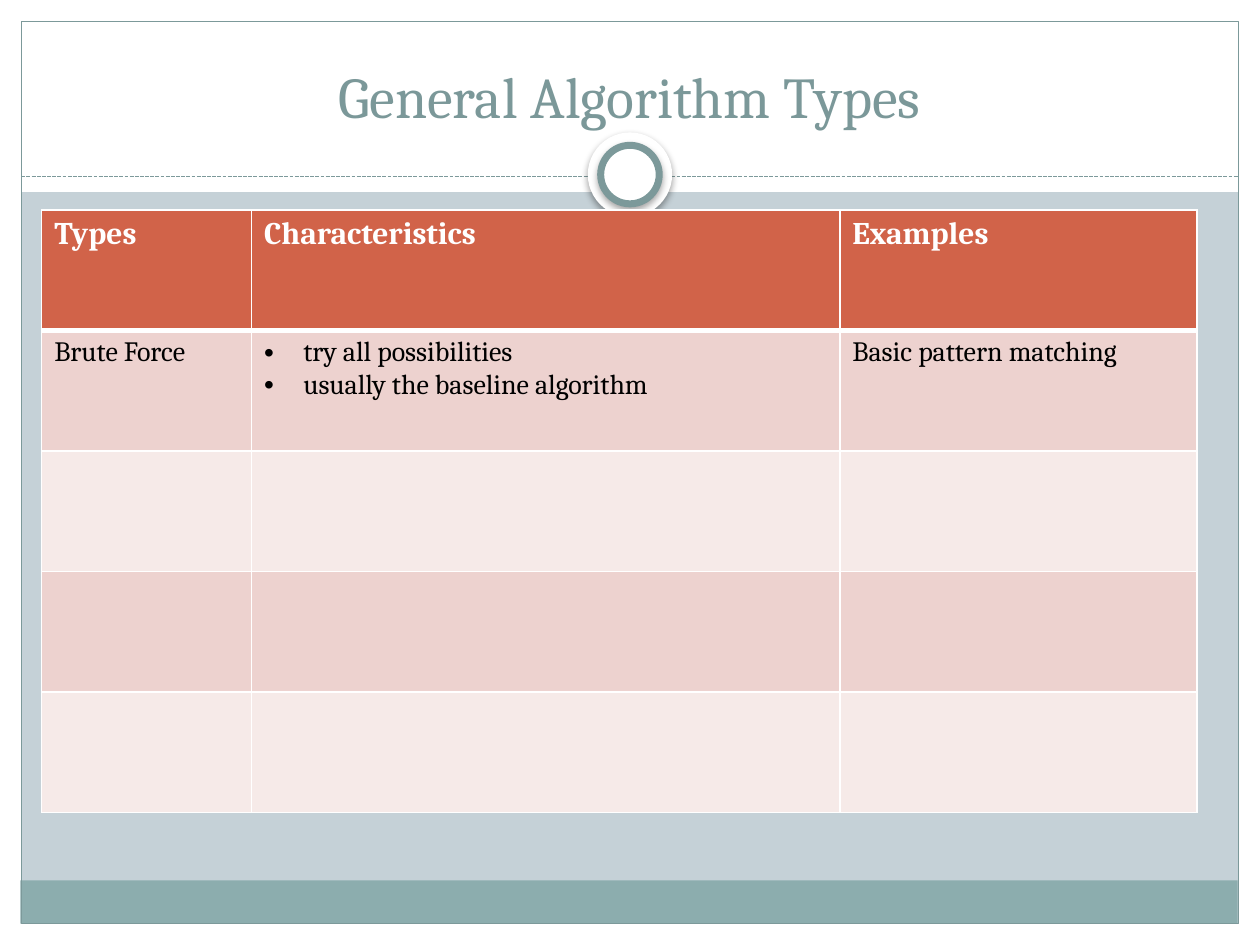
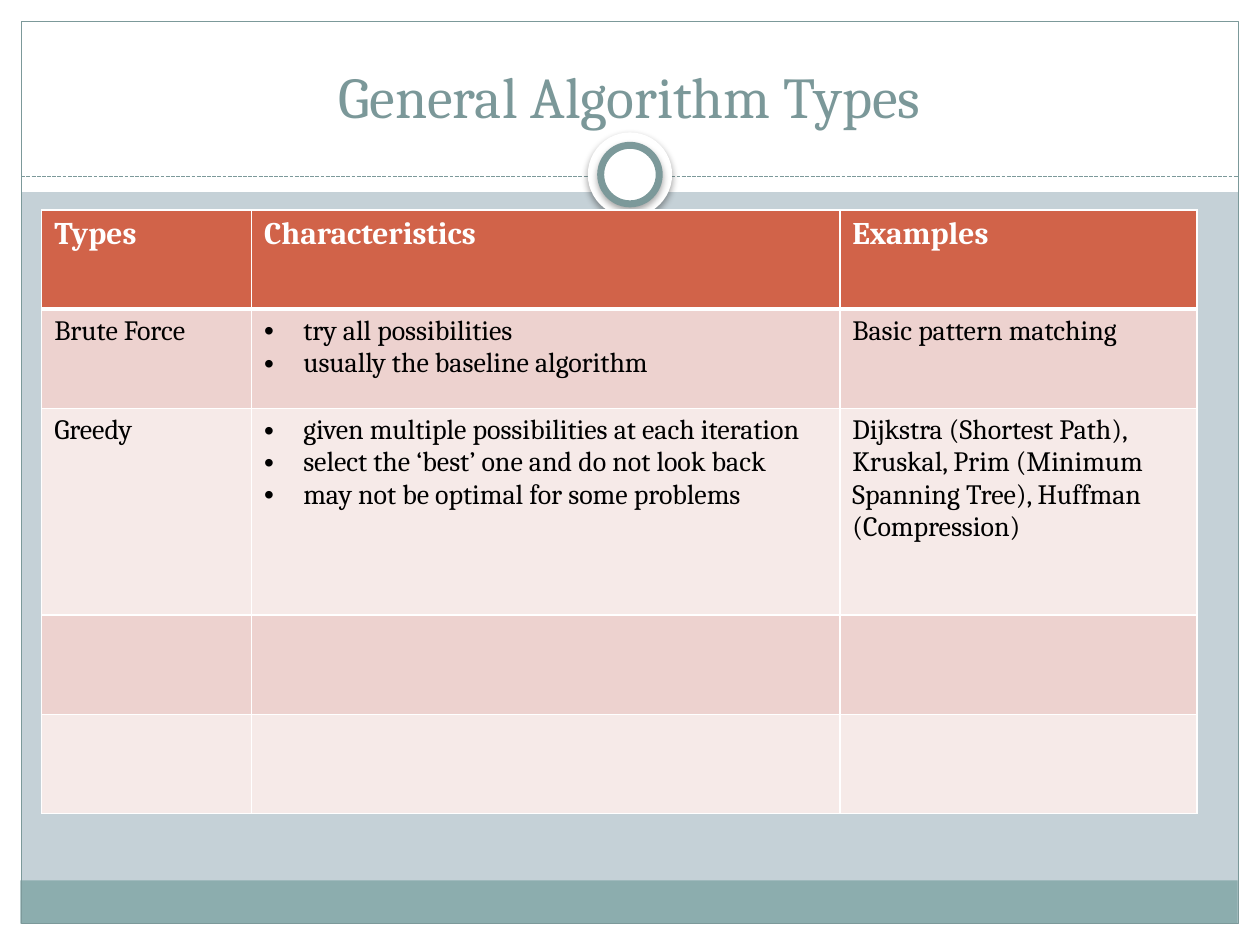
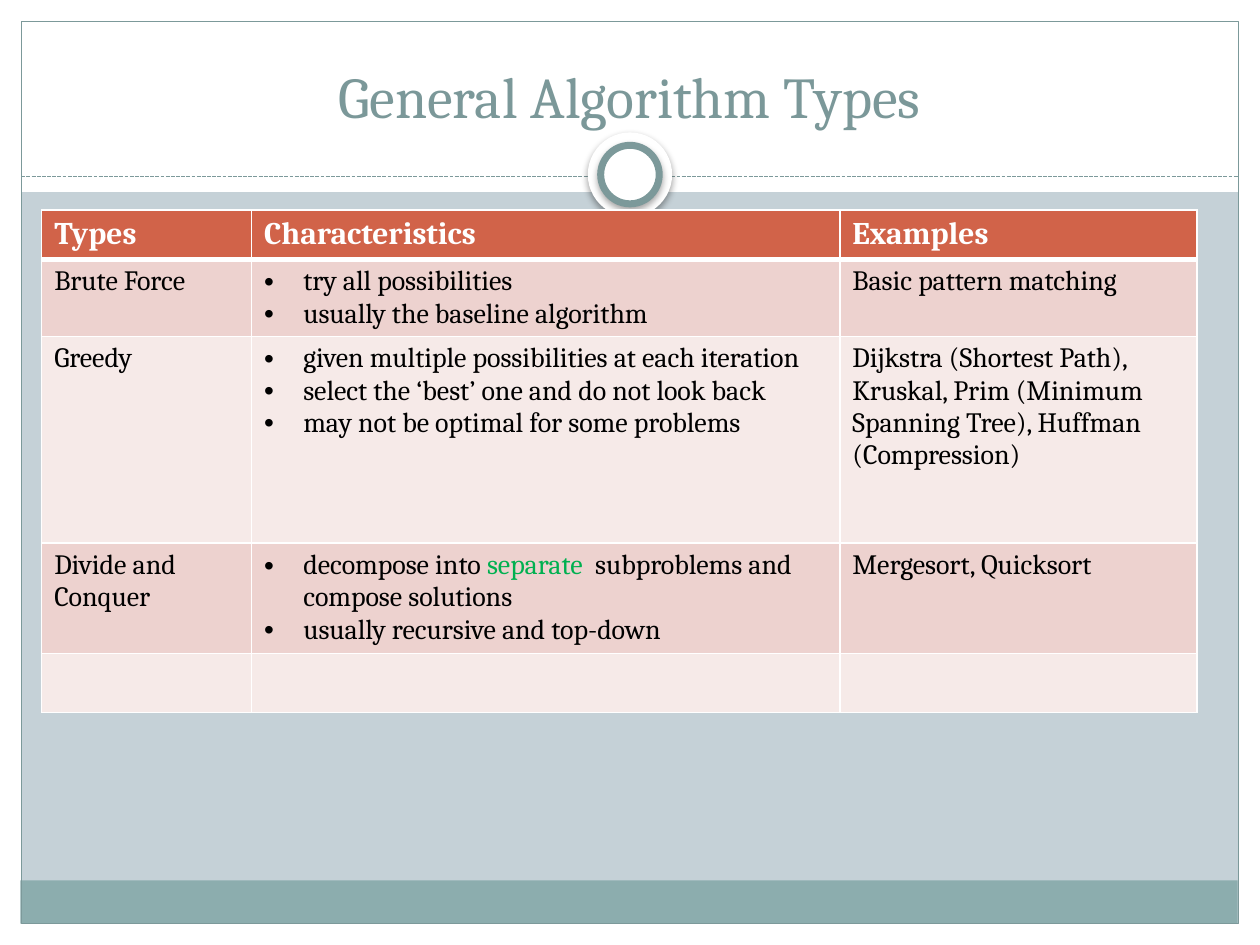
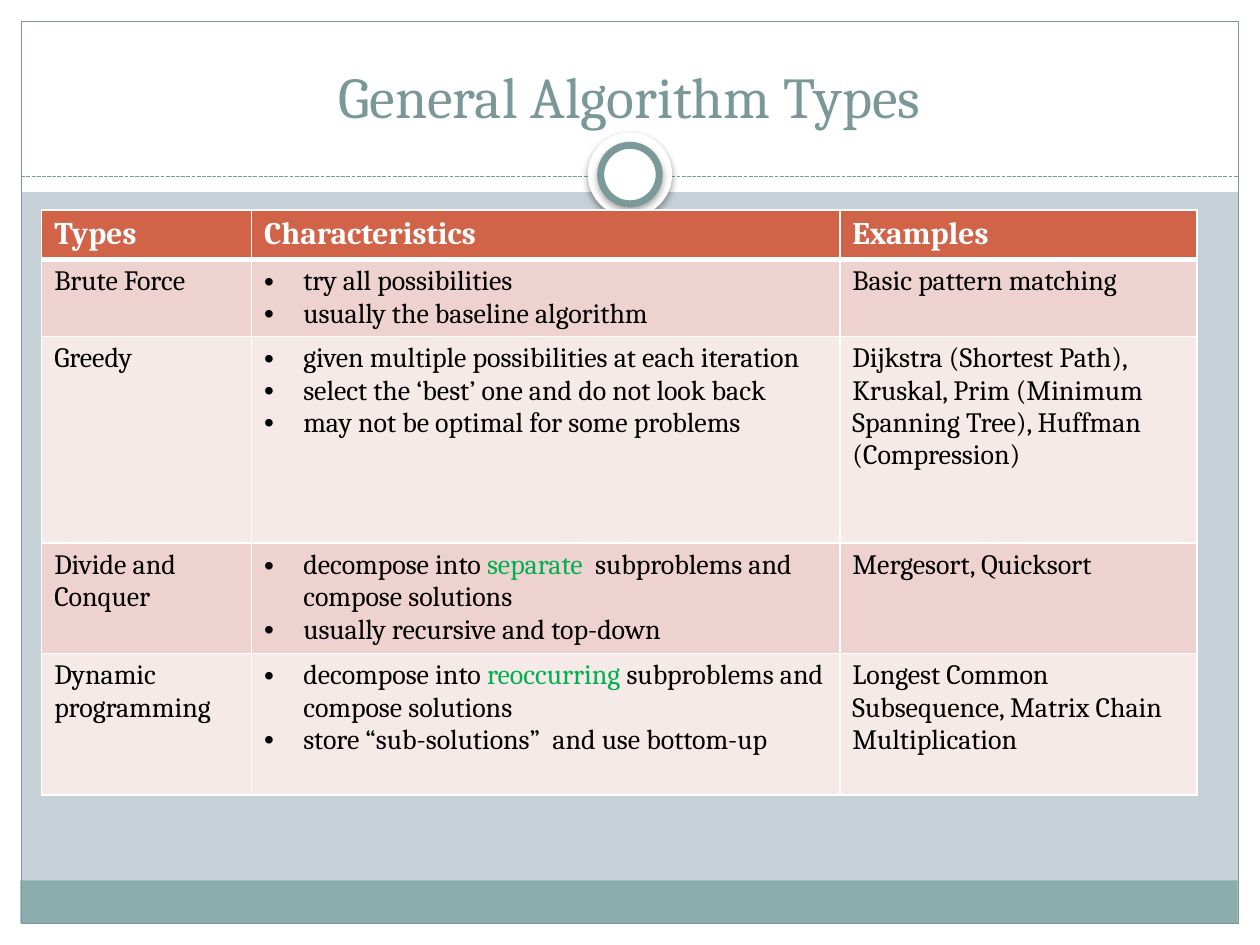
from lxml.etree import SubElement
from pptx import Presentation
from pptx.dml.color import RGBColor
from pptx.enum.dml import MSO_LINE_DASH_STYLE as Dash
from pptx.enum.shapes import MSO_CONNECTOR as Connector, MSO_SHAPE as Shape
from pptx.enum.text import MSO_ANCHOR as Anchor, MSO_AUTO_SIZE as AutoSize, PP_ALIGN as Align
from pptx.oxml.ns import qn
from pptx.util import Cm, Pt

FONT = "Cambria"
COLORS = {name: RGBColor.from_string(value) for name, value in {
    "background": "C5D1D7", "white": "FFFFFF", "black": "000000",
    "footer": "8CADAE", "outline": "7C999A", "title": "7B9899",
    "header": "D16349", "odd row": "EDD2CF", "even row": "F6EAE8",
    "highlight": "00B050",
}.items()}

# Table text: one list of paragraphs per cell, highlighted words between bars
HEADINGS = ["Types", "Characteristics", "Examples"]
ALGORITHMS = [
    ["Brute Force",
     ["try all possibilities", "usually the baseline algorithm"],
     "Basic pattern matching"],
    ["Greedy",
     ["given multiple possibilities at each iteration",
      "select the ‘best’ one and do not look back",
      "may not be optimal for some problems"],
     "Dijkstra (Shortest Path), Kruskal, Prim (Minimum Spanning Tree), Huffman (Compression)"],
    ["Divide and Conquer",
     ["decompose into |separate | subproblems and compose solutions",
      "usually recursive and top-down"],
     "Mergesort, Quicksort"],
    ["Dynamic programming",
     ["decompose into |reoccurring |subproblems and compose solutions",
      "store “sub-solutions”  and use bottom-up"],
     "Longest Common Subsequence, Matrix Chain Multiplication"],
]
COLUMN_WIDTHS = [4.23, 11.86, 7.2]
# Each slide reveals one more algorithm
ROW_HEIGHTS = [
    [2.43] * 5,
    [2, 2, 4.17, 2, 2],
    [1, 1.55, 4.17, 2.22, 1.19],
    [1, 1.55, 4.17, 2.22, 2.86],
]


def add_text(paragraph, text, size, color, bold=False):
    for index, part in enumerate(text.split("|")):
        run = paragraph.add_run()
        run.text = part
        run.font.name = FONT
        run.font.size = Pt(size)
        run.font.bold = bold
        run.font.color.rgb = COLORS["highlight" if index % 2 else color]


def add_color(parent, color):
    fill = SubElement(parent, qn("a:solidFill"))
    return SubElement(fill, qn("a:srgbClr"), val=str(COLORS[color]))


presentation = Presentation()
presentation.slide_width = Cm(25.4)
presentation.slide_height = Cm(19.05)
layout = presentation.slide_layouts[5]
layout.background.fill.solid()
layout.background.fill.fore_color.rgb = COLORS["background"]
title_area = layout.placeholders[0]
title_area.left, title_area.top = Cm(0.84), Cm(0.64)
title_area.width, title_area.height = Cm(23.7), Cm(2.11)
slides = [presentation.slides.add_slide(layout) for _ in ROW_HEIGHTS]

# Shared frame: drawn on the first slide, then moved to the layout
decorations = []
shapes = slides[0].shapes
for kind, left, top, width, height, fill, line_width in [
    (Shape.RECTANGLE, 0, 18.62, 25.4, 0.43, "white", 0),
    (Shape.RECTANGLE, 0, 0, 25.4, 3.87, "white", 0),
    (Shape.RECTANGLE, 0, 0, 0.43, 19.05, "white", 0),
    (Shape.RECTANGLE, 24.97, 0, 0.43, 19.05, "white", 0),
    (Shape.RECTANGLE, 0.41, 17.75, 24.54, 0.87, "footer", 0),
    (Shape.RECTANGLE, 0.43, 0.43, 24.54, 18.19, None, 0.75),
    (Shape.OVAL, 11.85, 2.67, 1.7, 1.7, "white", 0),
    (Shape.OVAL, 12.11, 2.93, 1.18, 1.18, "white", 4),
]:
    shape = shapes.add_shape(kind, Cm(left), Cm(top), Cm(width), Cm(height))
    shape.shadow.inherit = False
    if fill:
        shape.fill.solid()
        shape.fill.fore_color.rgb = COLORS[fill]
    else:
        shape.fill.background()
    if line_width:
        shape.line.width = Pt(line_width)
        shape.line.color.rgb = COLORS["outline"]
    else:
        shape.line.fill.background()
    if kind == Shape.OVAL:
        effects = shape.element.spPr.find(qn("a:effectLst"))
        shadow = SubElement(effects, qn("a:outerShdw"), blurRad=str(Pt(4)),
                            dist=str(Pt(2)), dir="5400000", rotWithShape="0")
        shadow_color = SubElement(shadow, qn("a:srgbClr"), val=str(COLORS["black"]))
        SubElement(shadow_color, qn("a:alpha"), val="35000")
    decorations.append(shape)

# Dashed rule, behind the two rings
rule = shapes.add_connector(Connector.STRAIGHT, Cm(0.43), Cm(3.56), Cm(24.97), Cm(3.56))
rule.line.width = Pt(0.75)
rule.line.color.rgb = COLORS["outline"]
rule.line.dash_style = Dash.SQUARE_DOT
SubElement(rule.element.spPr, qn("a:effectLst"))
decorations.insert(-2, rule)
for position, shape in enumerate(decorations, start=2):
    layout.shapes.element.insert(position, shape.element)

for shown, (slide, heights) in enumerate(zip(slides, ROW_HEIGHTS), start=1):
    # Title
    frame = slide.shapes.title.text_frame
    frame.auto_size = AutoSize.NONE
    frame.vertical_anchor = Anchor.BOTTOM
    frame.paragraphs[0].alignment = Align.CENTER
    add_text(frame.paragraphs[0], "General Algorithm Types", 33, "title")

    # Table grid
    table = slide.shapes.add_table(
        len(heights), len(COLUMN_WIDTHS), Cm(0.84), Cm(4.23),
        Cm(sum(COLUMN_WIDTHS)), Cm(sum(heights))).table
    for column, width in zip(table.columns, COLUMN_WIDTHS):
        column.width = Cm(width)
    for row, height in zip(table.rows, heights):
        row.height = Cm(height)

    # Cell fills and borders
    for row_index, row in enumerate(table.rows):
        fill = "odd row" if row_index % 2 else "even row"
        for cell in row.cells:
            cell.fill.solid()
            cell.fill.fore_color.rgb = COLORS[fill if row_index else "header"]
            properties = cell._tc.get_or_add_tcPr()
            for position, side in enumerate(["lnL", "lnR", "lnT", "lnB"]):
                thick = (row_index, side) in [(0, "lnB"), (1, "lnT")]
                border = SubElement(properties, qn(f"a:{side}"), w=str(Pt(3 if thick else 0.96)))
                add_color(border, "white")
                properties.insert(position, border)

    # Cell text
    for row_index, contents in enumerate([HEADINGS] + ALGORITHMS[:shown]):
        for column_index, content in enumerate(contents):
            bulleted = isinstance(content, list)
            frame = table.cell(row_index, column_index).text_frame
            for index, text in enumerate(content if bulleted else [content]):
                paragraph = frame.add_paragraph() if index else frame.paragraphs[0]
                if bulleted:
                    format_element = paragraph._p.get_or_add_pPr()
                    format_element.set("marL", str(Cm(0.79)))
                    format_element.set("indent", str(-Cm(0.79)))
                    bullet_color = SubElement(format_element, qn("a:buClr"))
                    SubElement(bullet_color, qn("a:srgbClr"), val=str(COLORS["black"]))
                    SubElement(format_element, qn("a:buFont"), typeface="Arial")
                    SubElement(format_element, qn("a:buChar"), char="•")
                if row_index:
                    add_text(paragraph, text, 16, "black")
                else:
                    add_text(paragraph, text, 18, "white", bold=True)

presentation.save("out.pptx")
